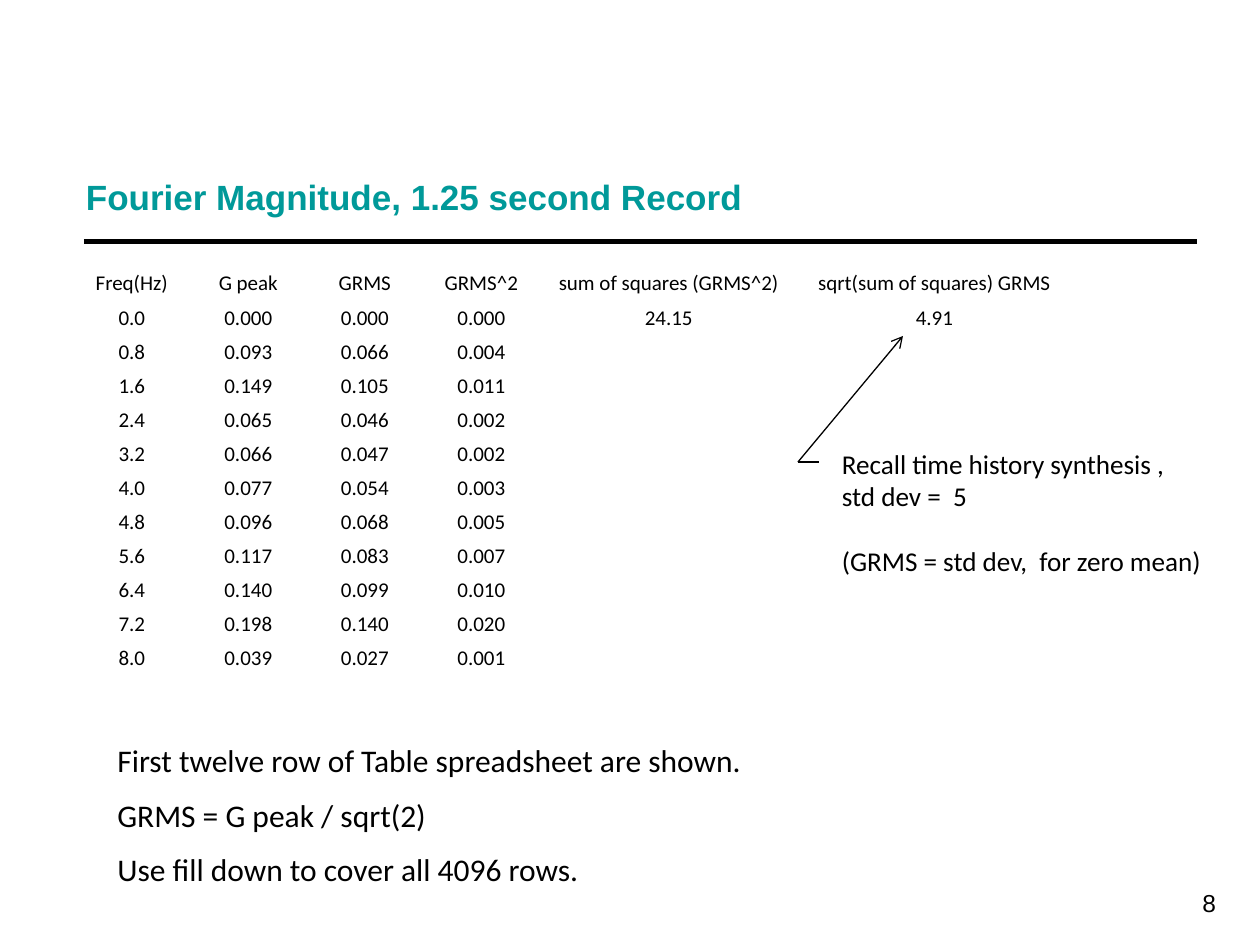
from lxml.etree import SubElement
from pptx import Presentation
from pptx.dml.color import RGBColor
from pptx.enum.shapes import MSO_CONNECTOR as Connector
from pptx.enum.text import MSO_ANCHOR as Anchor, PP_ALIGN as Align
from pptx.oxml.ns import qn
from pptx.util import Inches, Pt

COLUMNS, ROWS = 120, 90
BLACK, TEAL = "000000", "009999"


def color(value):
    return RGBColor.from_string(value)


class SlideBuilder:
    font = "Calibri"

    def __init__(self, presentation):
        self.slide = presentation.slides.add_slide(presentation.slide_layouts[6])
        self.column = presentation.slide_width / COLUMNS
        self.row = presentation.slide_height / ROWS

    def place(self, x, y):
        return round(x * self.column), round(y * self.row)

    def style(self, paragraph, size, font=None, fill=BLACK, bold=False):
        for run in paragraph.runs:
            run.font.name = font or self.font
            run.font.size = Pt(size)
            run.font.bold = bold
            run.font.color.rgb = color(fill)

    def text(self, box, lines, size, align=Align.LEFT, anchor=Anchor.TOP, gap=0, **look):
        x, y, width, height = box
        shape = self.slide.shapes.add_textbox(*self.place(x, y), *self.place(width, height))
        frame = shape.text_frame
        frame.word_wrap = True
        frame.vertical_anchor = anchor
        frame.text = "\n".join(lines)
        for paragraph in frame.paragraphs:
            paragraph.alignment = align
            self.style(paragraph, size, **look)
        for paragraph in frame.paragraphs[:-1]:
            paragraph.space_after = Pt(gap)

    def line(self, start, end, width, arrow=False):
        connector = self.slide.shapes.add_connector(
            Connector.STRAIGHT, *self.place(*start), *self.place(*end))
        connector.line.width = Pt(width)
        connector.line.color.rgb = color(BLACK)
        if arrow:
            outline = connector._element.spPr.find(qn("a:ln"))
            SubElement(outline, qn("a:tailEnd"), type="arrow")
        SubElement(connector._element.spPr, qn("a:effectLst"))

    def table(self, box, widths, records, size):
        x, y, width, height = box
        shape = self.slide.shapes.add_table(
            len(records), len(widths), *self.place(x, y), *self.place(width, height))
        table = shape.table
        table.first_row = table.horz_banding = False
        for column, share in zip(table.columns, widths):
            column.width = round(share * self.column)
        for row, record in zip(table.rows, records):
            row.height = round(height * self.row / len(records))
            padded = record + [""] * (len(widths) - len(record))
            for cell, value in zip(row.cells, padded):
                self.cell(cell, value, size)

    def cell(self, cell, value, size):
        cell.fill.background()
        cell.vertical_anchor = Anchor.BOTTOM
        cell.margin_left = cell.margin_right = cell.margin_top = Inches(0.01)
        cell.margin_bottom = 0
        paragraph = cell.text_frame.paragraphs[0]
        paragraph.text = value
        paragraph.alignment = Align.CENTER
        self.style(paragraph, size)
        if not value:
            SubElement(paragraph._p, qn("a:endParaRPr"), sz=str(size * 100))


def main():
    presentation = Presentation()
    presentation.slide_width = Inches(10)
    presentation.slide_height = Inches(7.5)
    builder = SlideBuilder(presentation)

    builder.line((8, 23), (114, 23), 3)
    builder.text((92, 83, 25, 6), ["8"], 14, Align.RIGHT, Anchor.MIDDLE,
                 font="Arial", fill="010000")
    builder.text((7, 4.3, 80, 17), ["Fourier Magnitude, 1.25 second Record"], 20,
                 anchor=Anchor.BOTTOM, font="Arial", fill=TEAL, bold=True)
    builder.text((10, 70, 83, 15.4), [
        "First twelve row of Table spreadsheet are shown.",
        "GRMS = G peak / sqrt(2)",
        "Use fill down to cover all 4096 rows.",
    ], 18, gap=9.5)

    records = [
        ["Freq(Hz)", "G peak", "GRMS", "GRMS^2",
         "sum of squares (GRMS^2)", "sqrt(sum of squares) GRMS"],
        ["0.0", "0.000", "0.000", "0.000", "24.15", "4.91"],
        ["0.8", "0.093", "0.066", "0.004"],
        ["1.6", "0.149", "0.105", "0.011"],
        ["2.4", "0.065", "0.046", "0.002"],
        ["3.2", "0.066", "0.047", "0.002"],
        ["4.0", "0.077", "0.054", "0.003"],
        ["4.8", "0.096", "0.068", "0.005"],
        ["5.6", "0.117", "0.083", "0.007"],
        ["6.4", "0.140", "0.099", "0.010"],
        ["7.2", "0.198", "0.140", "0.020"],
        ["8.0", "0.039", "0.027", "0.001"],
    ]
    builder.table((7, 25, 95, 39), [11.1] * 4 + [24.6, 26], records, 12)

    builder.text((79, 42, 38, 13.7), [
        "Recall time history synthesis , \vstd dev =  5",
        "(GRMS = std dev,  for zero mean)",
    ], 15.5, gap=18.5)
    builder.line((76, 44), (86, 32), 0.75, arrow=True)
    builder.line((76, 44), (78, 44), 0.75)

    presentation.save("out.pptx")


if __name__ == "__main__":
    main()
